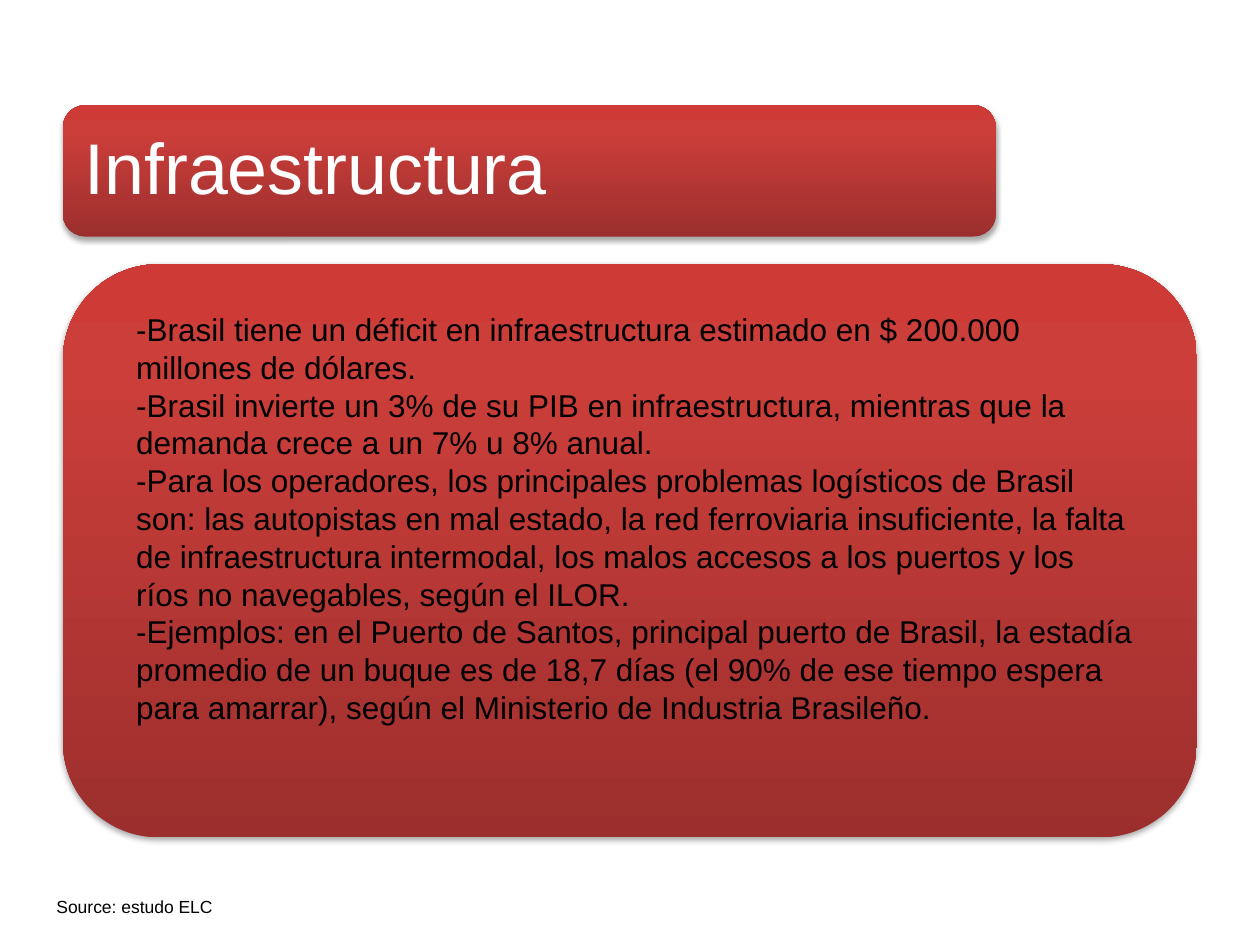
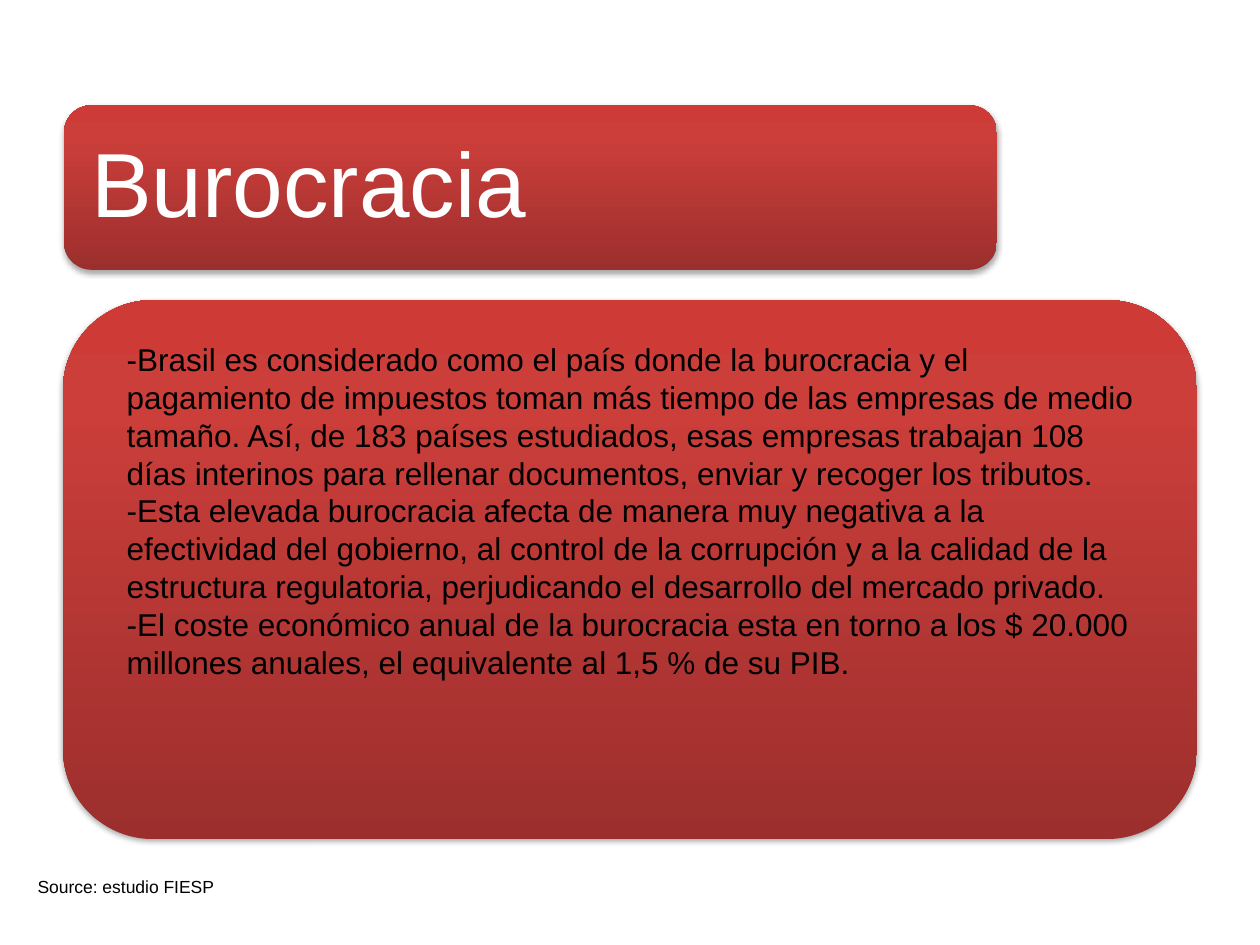
from lxml import etree
from pptx import Presentation
from pptx.dml.color import RGBColor
from pptx.enum.shapes import MSO_SHAPE
from pptx.enum.text import MSO_ANCHOR, MSO_AUTO_SIZE, PP_ALIGN
from pptx.oxml import parse_xml
from pptx.oxml.ns import nsdecls, qn
from pptx.util import Pt

FONT = "Arial"
WHITE = RGBColor(0xFF, 0xFF, 0xFF)
BLACK = RGBColor(0x00, 0x00, 0x00)
RED_STOPS = [
    (0, RGBColor(0x9C, 0x2F, 0x2D)),
    (80, RGBColor(0xCB, 0x3E, 0x3A)),
    (100, RGBColor(0xCE, 0x3B, 0x37)),
]
STOPS_XML = "".join(
    f'<a:gs pos="{position * 1000}"><a:srgbClr val="{color}"/></a:gs>'
    for position, color in RED_STOPS
)
GRADIENT_XML = (
    f'<a:gradFill {nsdecls("a")} rotWithShape="1"><a:gsLst>{STOPS_XML}</a:gsLst>'
    '<a:lin ang="16200000" scaled="0"/></a:gradFill>'
)
SHADOW_XML = (
    f'<a:outerShdw {nsdecls("a")} blurRad="{Pt(3.1)}" dist="{Pt(1.8)}" dir="5400000" '
    'rotWithShape="0"><a:srgbClr val="000000"><a:alpha val="35000"/></a:srgbClr></a:outerShdw>'
)

SLIDES = [
    {
        "title": "Infraestructura",
        "title_size": 41,
        "title_inset": 12.3,
        "band": (36, 60.2, 533, 75),
        "panel": (36, 151, 648, 327.5),
        "body": (70.6, 173.5, 584, 269),
        "points": [
            "-Brasil tiene un déficit en infraestructura estimado en $ 200.000 millones de dólares.",
            "-Brasil invierte un 3% de su PIB en infraestructura, mientras que la demanda crece a un 7% u 8% anual.",
            "-Para los operadores, los principales problemas logísticos de Brasil son: las autopistas en mal estado, "
            "la red ferroviaria insuficiente, la falta de infraestructura intermodal, los malos accesos a los puertos "
            "y los ríos no navegables, según el ILOR.",
            "-Ejemplos: en el Puerto de Santos, principal puerto de Brasil, la estadía promedio de un buque es de "
            "18,7 días (el 90% de ese tiempo espera para amarrar), según el Ministerio de Industria Brasileño.",
        ],
        "source": "Source: estudo ELC",
        "source_box": (25.2, 508.3, 238, 19.4),
    },
    {
        "title": "Burocracia",
        "title_size": 52,
        "title_inset": 15.6,
        "band": (36.6, 60.2, 533, 94),
        "panel": (36, 171.5, 648, 308),
        "body": (65.2, 190.8, 590, 204),
        "points": [
            "-Brasil es considerado como el país donde la burocracia y el pagamiento de impuestos toman más tiempo "
            "de las empresas de medio tamaño. Así, de 183 países estudiados, esas empresas trabajan 108 días "
            "interinos para rellenar documentos, enviar y recoger los tributos.",
            "-Esta elevada burocracia afecta de manera muy negativa a la efectividad del gobierno, al control de la "
            "corrupción y a la calidad de la estructura regulatoria, perjudicando el desarrollo del mercado privado.",
            "-El coste económico anual de la burocracia esta en torno a los $ 20.000 millones anuales, "
            "el equivalente al 1,5 % de su PIB.",
        ],
        "source": "Source: estudio FIESP",
        "source_box": (14.4, 497, 263.5, 19.4),
    },
]


def add_red_box(slide, box, depth):
    red_box = slide.shapes.add_shape(MSO_SHAPE.ROUNDED_RECTANGLE, *map(Pt, box))
    red_box.line.fill.background()
    red_box.shadow.inherit = False
    properties = red_box._element.spPr
    properties.find(qn("a:prstGeom")).addnext(parse_xml(GRADIENT_XML))
    properties.find(qn("a:effectLst")).append(parse_xml(SHADOW_XML))
    slide.shapes._spTree.insert(depth, red_box._element)


def set_text(holder, box, paragraphs, size, color):
    holder.left, holder.top, holder.width, holder.height = map(Pt, box)
    frame = holder.text_frame
    frame.word_wrap = True
    frame.auto_size = MSO_AUTO_SIZE.NONE
    frame.text = "\n".join(paragraphs)
    for paragraph in frame.paragraphs:
        indents = paragraph._p.get_or_add_pPr()
        indents.set("marL", "0")
        indents.set("indent", "0")
        etree.SubElement(indents, qn("a:buNone"))
        paragraph.alignment = PP_ALIGN.LEFT
        paragraph.space_before = Pt(0)
        paragraph.font.name = FONT
        paragraph.font.size = Pt(size)
        paragraph.font.color.rgb = color
    return frame


deck = Presentation()
deck.slide_width, deck.slide_height = Pt(720), Pt(540)

for content in SLIDES:
    slide = deck.slides.add_slide(deck.slide_layouts[1])
    add_red_box(slide, content["band"], 2)
    add_red_box(slide, content["panel"], 3)

    heading = set_text(slide.shapes.title, content["band"], [content["title"]], content["title_size"], WHITE)
    heading.vertical_anchor = MSO_ANCHOR.MIDDLE
    heading.paragraphs[0].line_spacing = 0.9
    inset = Pt(content["title_inset"])
    heading.margin_left = heading.margin_top = heading.margin_right = heading.margin_bottom = inset

    set_text(slide.placeholders[1], content["body"], content["points"], 18, BLACK)

    source_note = slide.shapes.add_textbox(*map(Pt, content["source_box"]))
    set_text(source_note, content["source_box"], [content["source"]], 10, BLACK)

deck.save("out.pptx")
